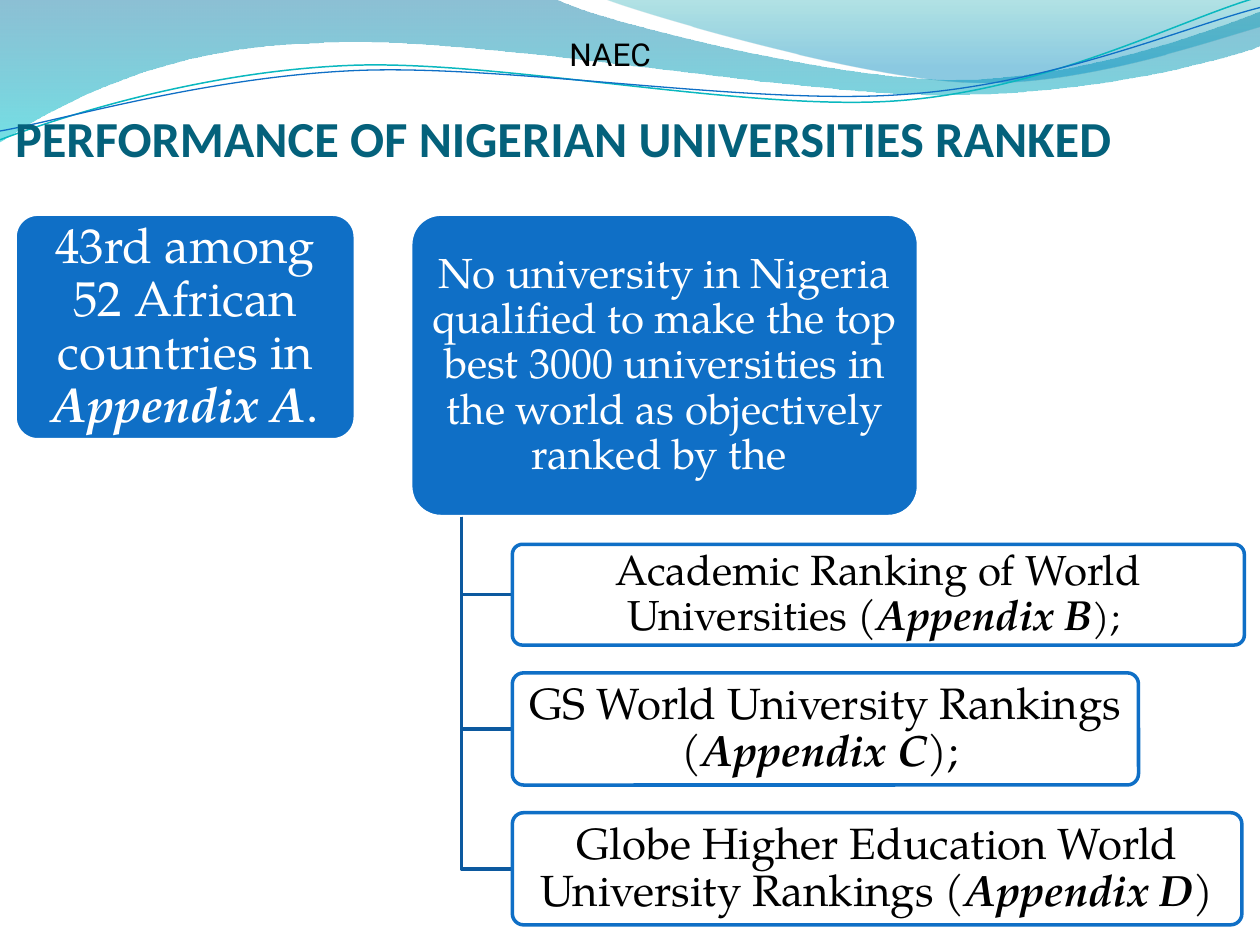
from collections import namedtuple

from lxml.etree import SubElement
from pptx import Presentation
from pptx.dml.color import RGBColor
from pptx.enum.shapes import MSO_SHAPE
from pptx.enum.text import MSO_ANCHOR, PP_ALIGN
from pptx.oxml.ns import qn
from pptx.util import Inches, Pt

WHITE = RGBColor(0xFF, 0xFF, 0xFF)
BLACK = RGBColor(0, 0, 0)
BLUE = RGBColor(0x0F, 0x6F, 0xC6)
BRANCH_BLUE = RGBColor(0x0C, 0x59, 0x9F)
TITLE_TEAL = RGBColor(0x04, 0x61, 0x7B)
LINE_TEAL = RGBColor(0x0A, 0xB8, 0xBF)
DEEP_BLUE = RGBColor(0, 0x74, 0xA1)
CYAN = RGBColor(0, 0xC6, 0xCF)
SEA_GREEN = RGBColor(0, 0xA1, 0xA9)
SKY_BLUE = RGBColor(0, 0x8B, 0xBF)
SERIF = "TeX Gyre Pagella"
GAP = 0.22

Box = namedtuple("Box", "left top width height")

BROAD_WAVE = [
    [(0, 0)], [(4.4, -0.01)],
    [(4.76, 0.17), (6.64, 0.63), (7.58, 0.63)],
    [(8.53, 0.63), (9.58, 0.26), (10, 0.09)], [(10.01, 0.36)],
    [(9.83, 0.44), (8.7, 0.76), (7.46, 0.75)],
    [(6.22, 0.75), (3.82, 0.28), (2.57, 0.34)],
    [(1.29, 0.36), (0.46, 0.83), (-0.01, 1.13)],
]
RIGHT_WAVE = [
    [(4.79, -0.01)],
    [(5.09, 0.11), (6.82, 0.62), (7.69, 0.65)],
    [(8.56, 0.69), (9.61, 0.32), (10, 0.21)], [(10, 0)],
]
TEAL_STRAND = [
    [(0, 1.11)],
    [(0.48, 0.93), (1.58, 0.57), (2.77, 0.52)],
    [(3.95, 0.47), (5.93, 0.89), (7.13, 0.8)],
    [(8.33, 0.71), (9.38, 0.15), (9.98, -0.02)],
]
BLUE_STRAND = [
    [(0, 1.04)],
    [(0.47, 0.96), (1.64, 0.61), (2.83, 0.56)],
    [(4.03, 0.51), (5.97, 0.84), (7.17, 0.75)],
    [(8.36, 0.67), (9.41, 0.21), (10, 0.06)],
]

RANKINGS = [
    (5.81, 0.8, "Academic Ranking of World Universities (", "Appendix B", "); ", 24, 22),
    (4.97, 0.89, "GS World University Rankings (", "Appendix C", "); ", 25, 25),
    (5.79, 0.89, "Globe Higher Education World University Rankings (", "Appendix D", ")", 25, 25),
]


def set_formats(target, **formats):
    for name, value in formats.items():
        setattr(target, name, value)


def set_opacity(shape, percents):
    colors = shape._element.spPr.iter(qn("a:srgbClr"))
    for color, percent in zip(colors, percents):
        SubElement(color, qn("a:alpha"), val=str(percent * 1000))


def set_line(shape, color, width):
    shape.line.color.rgb = color
    shape.line.width = Pt(width)


def write_runs(para, runs):
    for text, size, font_name, color, style in runs:
        span = para.add_run()
        span.text = text
        set_formats(span.font, size=Pt(size), name=font_name, **style)
        span.font.color.rgb = color


def add_outline(page, box, segments, close):
    placed = [
        [(Inches(box.left + x), Inches(box.top + y)) for x, y in segment]
        for segment in segments
    ]
    ends = [segment[-1] for segment in placed]
    builder = page.shapes.build_freeform(*ends[0])
    builder.add_line_segments(ends[1:], close=close)
    shape = builder.convert_to_shape()
    shape.shadow.inherit = False
    if not close:
        shape.fill.background()
    steps = list(shape._element.spPr.iter(qn("a:lnTo")))
    for step, segment in zip(steps, placed[1:]):
        if len(segment) == 3:
            step.tag = qn("a:cubicBezTo")
            for index, (x, y) in enumerate(segment[:2]):
                point = step.makeelement(
                    qn("a:pt"), {"x": str(x - shape.left), "y": str(y - shape.top)}
                )
                step.insert(index, point)
    return shape


def add_waves(page, box):
    for segments, stops in (
        (BROAD_WAVE, [(0, DEEP_BLUE, 45), (1, CYAN, 55)]),
        (RIGHT_WAVE, [(0, SEA_GREEN, 30), (0.8, SKY_BLUE, 45)]),
    ):
        wave = add_outline(page, box, segments, True)
        wave.line.fill.background()
        wave.fill.gradient()
        wave.fill.gradient_angle = 270
        for stop, (position, color, _) in zip(wave.fill.gradient_stops, stops):
            stop.position = position
            stop.color.rgb = color
        set_opacity(wave, [opacity for _, _, opacity in stops])

    for segments, color, width in ((TEAL_STRAND, LINE_TEAL, 0.85), (BLUE_STRAND, BLUE, 0.75)):
        set_line(add_outline(page, box, segments, False), color, width)


def add_label(page, box, runs, **formats):
    frame = page.shapes.add_textbox(*map(Inches, box)).text_frame
    set_formats(frame, **formats)
    write_runs(frame.paragraphs[0], runs)


def add_card(page, box, fill, line, runs, inset=(0.05, 0.03)):
    card = page.shapes.add_shape(MSO_SHAPE.ROUNDED_RECTANGLE, *map(Inches, box))
    card.adjustments[0] = 0.1
    card.shadow.inherit = False
    card.fill.solid()
    card.fill.fore_color.rgb = fill
    set_line(card, line, 2)
    side, end = map(Inches, inset)
    set_formats(
        card.text_frame, word_wrap=True, vertical_anchor=MSO_ANCHOR.MIDDLE,
        margin_left=side, margin_right=side, margin_top=end, margin_bottom=end,
    )
    para = card.text_frame.paragraphs[0]
    set_formats(para, alignment=PP_ALIGN.CENTER, line_spacing=0.9)
    write_runs(para, runs)
    return card


def add_ranking_tree(page, box):
    add_card(page, box, BLUE, WHITE, [(
        "No university in Nigeria qualified to make the top best 3000 "
        "universities in the world as objectively ranked by the ",
        24, SERIF, WHITE, {},
    )])
    stem, reach = box.width * 0.1, box.width * 0.2
    top = box.height + GAP
    for width, height, name, appendix, ending, size, ending_size in RANKINGS:
        middle = top + height / 2
        corners = [[(stem, box.height)], [(stem, middle)], [(reach, middle)]]
        set_line(add_outline(page, box, corners, False), BRANCH_BLUE, 2)
        place = Box(box.left + reach, box.top + top, width, height)
        card = add_card(page, place, WHITE, BLUE, [
            (name, size, SERIF, BLACK, {}),
            (appendix, size, SERIF, BLACK, {"bold": True, "italic": True}),
            (ending, ending_size, SERIF, BLACK, {}),
        ])
        set_opacity(card, [90])
        top += height + GAP


def build_slide(page, box):
    add_waves(page, box)
    add_label(
        page, Box(0.12, 0.83, 9.88, 0.5),
        [("PERFORMANCE OF NIGERIAN UNIVERSITIES RANKED", 28.8, "Calibri", TITLE_TEAL, {"bold": True})],
        word_wrap=True, vertical_anchor=MSO_ANCHOR.BOTTOM,
        margin_left=0, margin_right=0, margin_bottom=0,
    )
    add_label(page, Box(4.42, 0.23, 0.86, 0.4), [("NAEC", 18, "Roboto", BLACK, {})], word_wrap=False)
    add_card(page, Box(0.12, 1.7, 2.7, 1.79), BLUE, WHITE, [
        ("43rd among 52 African countries in ", 28, SERIF, WHITE, {}),
        ("Appendix A", 28, SERIF, WHITE, {"bold": True, "italic": True}),
        (".", 28, SERIF, WHITE, {}),
    ], inset=(0.06, 0.04))
    add_ranking_tree(page, Box(3.26, 1.7, 4.03, 2.4))


def main():
    deck = Presentation()
    set_formats(deck, slide_width=Inches(10), slide_height=Inches(7.5))
    page = deck.slides.add_slide(deck.slide_layouts[6])
    build_slide(page, Box(0, 0, 10, 7.5))
    deck.save("out.pptx")


if __name__ == "__main__":
    main()
